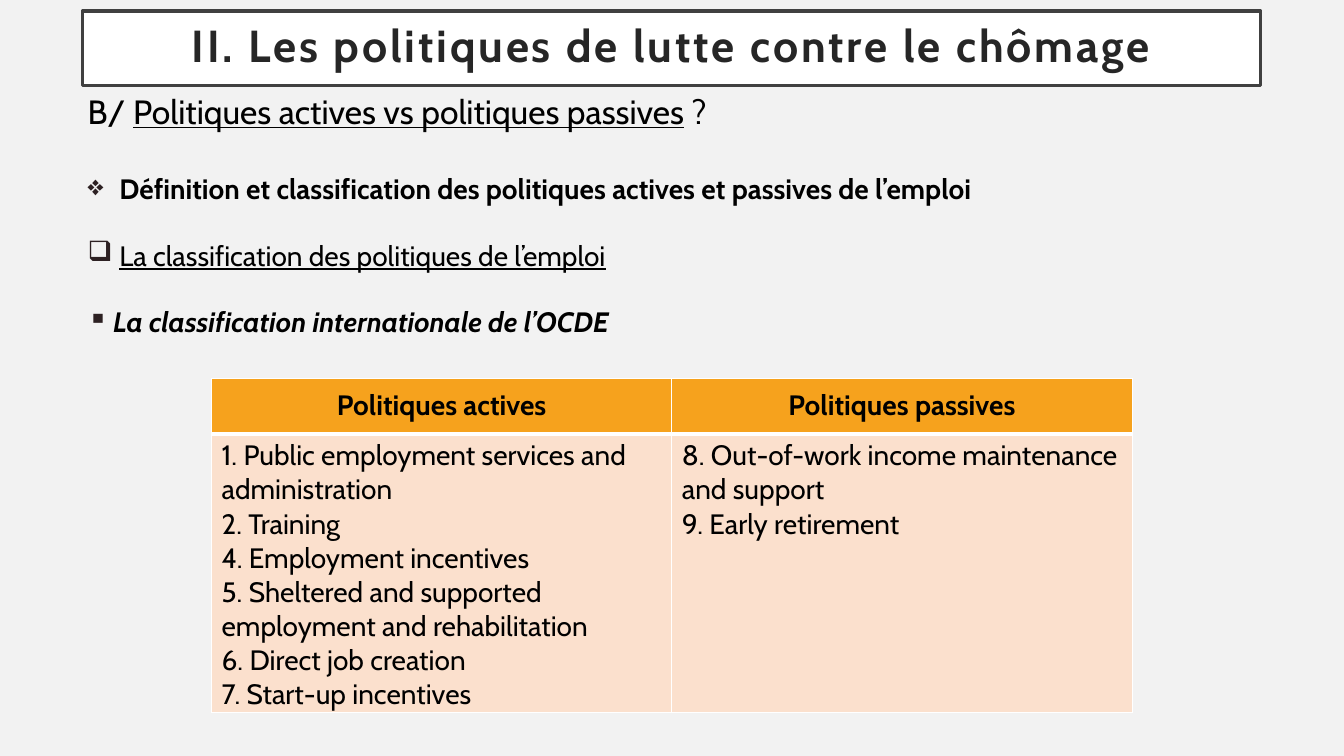
from dataclasses import dataclass

from lxml import etree
from pptx import Presentation
from pptx.dml.color import RGBColor
from pptx.enum.text import MSO_ANCHOR, MSO_AUTO_SIZE, PP_ALIGN
from pptx.oxml.ns import qn
from pptx.util import Cm, Pt

CENTER, LEFT, JUSTIFY = PP_ALIGN.CENTER, PP_ALIGN.LEFT, PP_ALIGN.JUSTIFY
TOP, MIDDLE = MSO_ANCHOR.TOP, MSO_ANCHOR.MIDDLE
NO_AUTOFIT = MSO_AUTO_SIZE.NONE
TITLE_ONLY = 5


@dataclass(frozen=True)
class Theme:
    font: str = "Cabin"
    background: str = "F2F2F2"
    white: str = "FFFFFF"
    title_line: str = "404040"
    title_text: str = "262626"
    text: str = "000000"
    bullet: str = "2D2123"
    header_fill: str = "F6A21D"
    body_fill: str = "FBE0CD"
    title_size: int = 32
    heading_size: int = 24
    body_size: int = 20


THEME = Theme()

# Each outline line: bullet, size, space before, runs with their styles
OUTLINE = [
    (None, THEME.heading_size, 0, [
        ("B/ ", {}),
        ("Politiques actives vs politiques passives", {"underline": True}),
        (" ?", {}),
    ]),
    ("❖", THEME.body_size, 29, [
        (" Définition et classification des politiques actives et passives de l’emploi",
         {"bold": True}),
    ]),
    ("❑", THEME.body_size, 23.5, [
        (" ", {}),
        ("La classification des politiques de l’emploi", {"underline": True}),
    ]),
    ("▪", THEME.body_size, 23.5, [
        ("La classification internationale de l’OCDE", {"bold": True, "italic": True}),
    ]),
]

POLICIES = {
    "Politiques actives": [
        "1. Public employment services and administration",
        "2. Training",
        "4. Employment incentives",
        "5. Sheltered and supported employment and rehabilitation",
        "6. Direct job creation",
        "7. Start-up incentives",
    ],
    "Politiques passives": [
        "8. Out-of-work income maintenance and support",
        "9. Early retirement",
    ],
}


def rgb(color):
    return RGBColor.from_string(color)


def add_run(paragraph, text, size, color=THEME.text, bold=False, italic=False,
            underline=False):
    run = paragraph.add_run()
    run.text = text
    font = run.font
    font.name, font.size = THEME.font, Pt(size)
    font.bold, font.italic, font.underline = bold, italic, underline
    font.color.rgb = rgb(color)
    return run


def next_paragraph(text_frame, index):
    return text_frame.paragraphs[0] if index == 0 else text_frame.add_paragraph()


def set_bullet(paragraph, character):
    properties = paragraph._p.get_or_add_pPr()
    properties.set("marL", str(Cm(0.64)))
    properties.set("indent", str(-Cm(0.64)))
    color = etree.SubElement(properties, qn("a:buClr"))
    etree.SubElement(color, qn("a:srgbClr"), val=THEME.bullet)
    etree.SubElement(properties, qn("a:buChar"), char=character)


def set_title(slide, text):
    title = slide.shapes.title
    title.left, title.top, title.width, title.height = (
        Cm(2.08), Cm(0.28), Cm(29.69), Cm(1.88))
    title.fill.solid()
    title.fill.fore_color.rgb = rgb(THEME.white)
    title.line.color.rgb = rgb(THEME.title_line)
    title.line.width = Pt(2.5)
    frame = title.text_frame
    frame.auto_size, frame.vertical_anchor, frame.word_wrap = NO_AUTOFIT, MIDDLE, True
    frame.margin_left = frame.margin_right = Cm(0.51)
    frame.margin_top = frame.margin_bottom = Cm(0.51)
    paragraph = frame.paragraphs[0]
    paragraph.alignment, paragraph.line_spacing = CENTER, 0.9
    run = add_run(paragraph, text, THEME.title_size, THEME.title_text, bold=True)
    run.font._element.set("spc", "200")


def add_outline(slide, lines):
    box = slide.shapes.add_textbox(Cm(1.96), Cm(2.16), Cm(29.69), Cm(7))
    frame = box.text_frame
    frame.word_wrap = True
    for index, (bullet, size, space_before, runs) in enumerate(lines):
        paragraph = next_paragraph(frame, index)
        paragraph.alignment = JUSTIFY
        paragraph.space_before = Pt(space_before)
        if bullet:
            set_bullet(paragraph, bullet)
        for text, style in runs:
            add_run(paragraph, text, size, **style)


def set_borders(cell, bottom_width):
    properties = cell._tc.get_or_add_tcPr()
    for side, width in (("L", 1), ("R", 1), ("T", 1), ("B", bottom_width)):
        line = etree.SubElement(properties, qn(f"a:ln{side}"), w=str(Pt(width)))
        fill = etree.SubElement(line, qn("a:solidFill"))
        etree.SubElement(fill, qn("a:srgbClr"), val=THEME.white)


def fill_cell(cell, lines, fill, header):
    set_borders(cell, 3 if header else 1)
    cell.fill.solid()
    cell.fill.fore_color.rgb = rgb(fill)
    cell.vertical_anchor = MIDDLE if header else TOP
    for index, text in enumerate(lines):
        paragraph = next_paragraph(cell.text_frame, index)
        paragraph.alignment = CENTER if header else LEFT
        add_run(paragraph, text, THEME.body_size, bold=header)


def add_policy_table(slide, policies):
    frame = slide.shapes.add_table(2, len(policies), Cm(5.33), Cm(9.53),
                                   Cm(23.2), Cm(8.43))
    table = frame.table
    table.horz_banding = False
    table.rows[0].height, table.rows[1].height = Cm(1.4), Cm(7.03)
    for column, (heading, measures) in enumerate(policies.items()):
        fill_cell(table.cell(0, column), [heading], THEME.header_fill, header=True)
        fill_cell(table.cell(1, column), measures, THEME.body_fill, header=False)


def main():
    presentation = Presentation()
    presentation.slide_width, presentation.slide_height = Cm(33.87), Cm(19.05)
    slide = presentation.slides.add_slide(presentation.slide_layouts[TITLE_ONLY])
    slide.background.fill.solid()
    slide.background.fill.fore_color.rgb = rgb(THEME.background)

    # Title, outline and table of policies
    set_title(slide, "II. Les politiques de lutte contre le chômage")
    add_outline(slide, OUTLINE)
    add_policy_table(slide, POLICIES)
    presentation.save("out.pptx")


if __name__ == "__main__":
    main()
